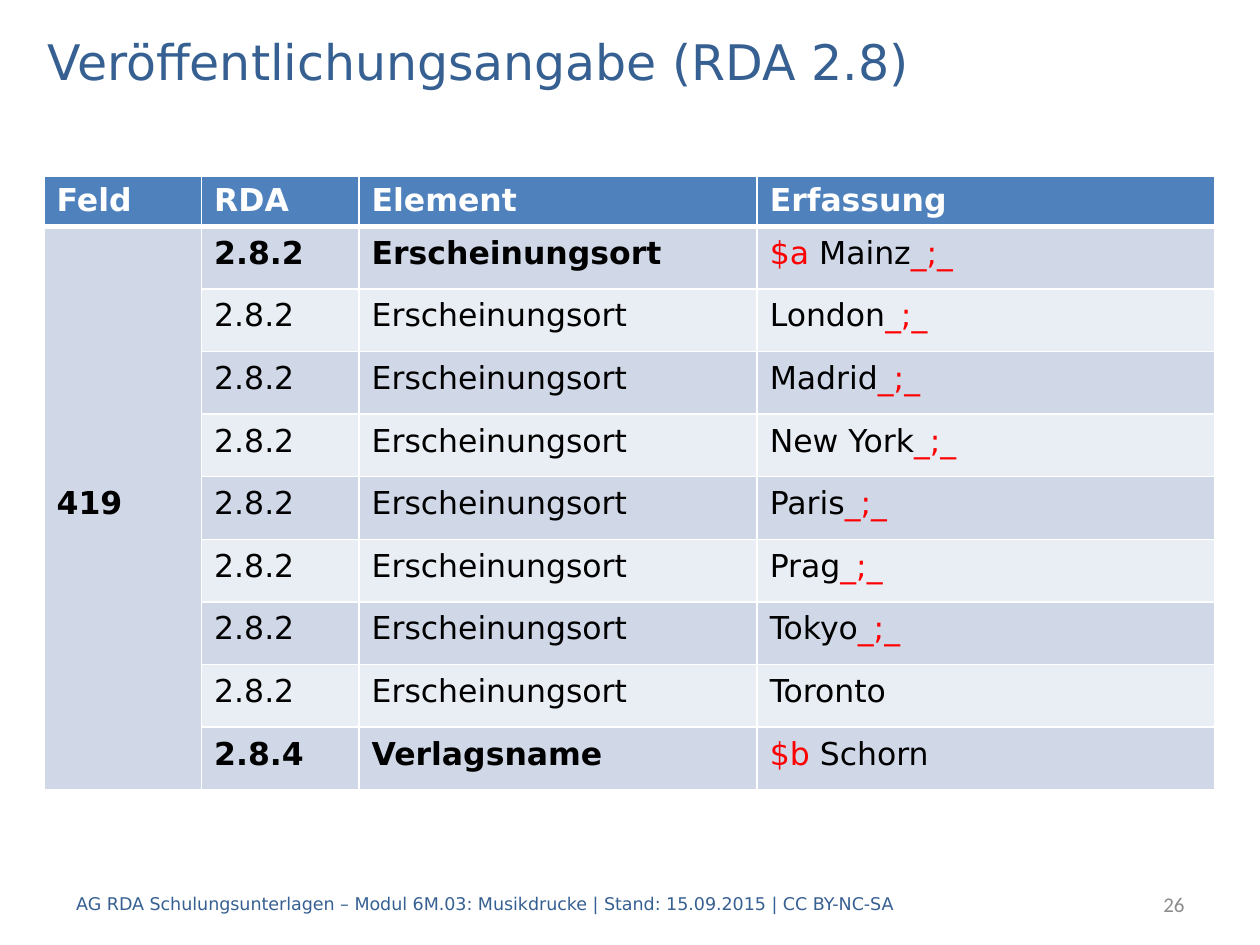
from pptx import Presentation
from pptx.dml.color import RGBColor
from pptx.enum.text import MSO_ANCHOR, PP_ALIGN
from pptx.oxml import parse_xml
from pptx.oxml.ns import nsdecls
from pptx.util import Pt

MIDDLE = MSO_ANCHOR.MIDDLE
LEFT, RIGHT = PP_ALIGN.LEFT, PP_ALIGN.RIGHT
SANS = "DejaVu Sans"
BLUE, GRAY, RED, BLACK, WHITE = "376092", "8C8C8C", "FF0000", "000000", "FFFFFF"
HEAD, DARK, LIGHT = "4F81BD", "D0D8E8", "E9EDF4"


def style(font, size, color, bold=False, name=SANS):
    font.name, font.size, font.bold = name, Pt(size), bold
    font.color.rgb = RGBColor.from_string(color)


def fill_cell(cell, parts, shade, base=3):
    """Write (text, colour, bold) parts into a cell with white borders."""
    para = cell.text_frame.paragraphs[0]
    for text, color, bold in parts:
        run = para.add_run()
        run.text = text
        style(run.font, 18, color, bold)
    props = cell._tc.get_or_add_tcPr()
    for side, width in (("L", 1), ("R", 1), ("T", 1), ("B", base)):
        props.append(parse_xml(
            f'<a:ln{side} {nsdecls("a")} w="{Pt(width)}"><a:solidFill>'
            f'<a:srgbClr val="{WHITE}"/></a:solidFill></a:ln{side}>'))
    cell.fill.solid()
    cell.fill.fore_color.rgb = RGBColor.from_string(shade)
    return para


deck = Presentation()
deck.slide_width, deck.slide_height = Pt(720), Pt(540)
slide = deck.slides.add_slide(deck.slide_layouts[6])

# Title, footer and page number
labels = [
    ("Veröffentlichungsangabe (RDA 2.8)", 20, 14.5, 680, 40, 28, BLUE, SANS, LEFT),
    ("AG RDA Schulungsunterlagen – Modul 6M.03: Musikdrucke | "
     "Stand: 15.09.2015 | CC BY-NC-SA", 36.5, 502, 601, 29, 10, BLUE, SANS, LEFT),
    ("26", 569.5, 502, 114.5, 29, 12, GRAY, "Calibri", RIGHT),
]
for text, left, top, width, height, size, color, name, align in labels:
    box = slide.shapes.add_textbox(Pt(left), Pt(top), Pt(width), Pt(height))
    frame = box.text_frame
    frame.word_wrap = True
    frame.vertical_anchor = MIDDLE
    frame.text = text
    para = frame.paragraphs[0]
    para.alignment = align
    style(para.runs[0].font, size, color, name=name)

# Table rows: number, element, prefix, entry, suffix
cities = ["Mainz", "London", "Madrid", "New York", "Paris", "Prag", "Tokyo", "Toronto"]
rows = [["2.8.2", "Erscheinungsort", "", city, "_;_"] for city in cities]
rows[0][2] = "$a "
rows[-1][4] = ""
rows.append(["2.8.4", "Verlagsname", "$b ", "Schorn", ""])

# Table grid
widths = [90, 90, 227.5, 261.5]
table = slide.shapes.add_table(len(rows) + 1, len(widths), Pt(25.2), Pt(100.5),
                               Pt(sum(widths)), Pt(341.7)).table
for col, width in zip(table.columns, widths):
    col.width = Pt(width)
for row in table.rows:
    row.height = Pt(35.8)
table.rows[0].height = Pt(19.5)

# Header row
for col, text in enumerate(["Feld", "RDA", "Element", "Erfassung"]):
    fill_cell(table.cell(0, col), [(text, WHITE, True)], HEAD)

# Body rows, with the field number across all of them
table.cell(1, 0).merge(table.cell(len(rows), 0))
for num, (code, label, prefix, entry, suffix) in enumerate(rows, 1):
    shade = DARK if num % 2 else LIGHT
    bold = bool(prefix)
    cells = [
        [("419", BLACK, True)] if num == 1 else [],
        [(code, BLACK, bold)],
        [(label, BLACK, bold)],
        [(prefix, RED, False), (entry, BLACK, False), (suffix, RED, False)],
    ]
    for col, parts in enumerate(cells):
        cell = table.cell(num, col)
        para = fill_cell(cell, [part for part in parts if part[0]],
                         shade if col else DARK, 1)
        cell.vertical_anchor = MIDDLE
        para.line_spacing = Pt(16)
        para.space_after = Pt(6)

deck.save("out.pptx")
